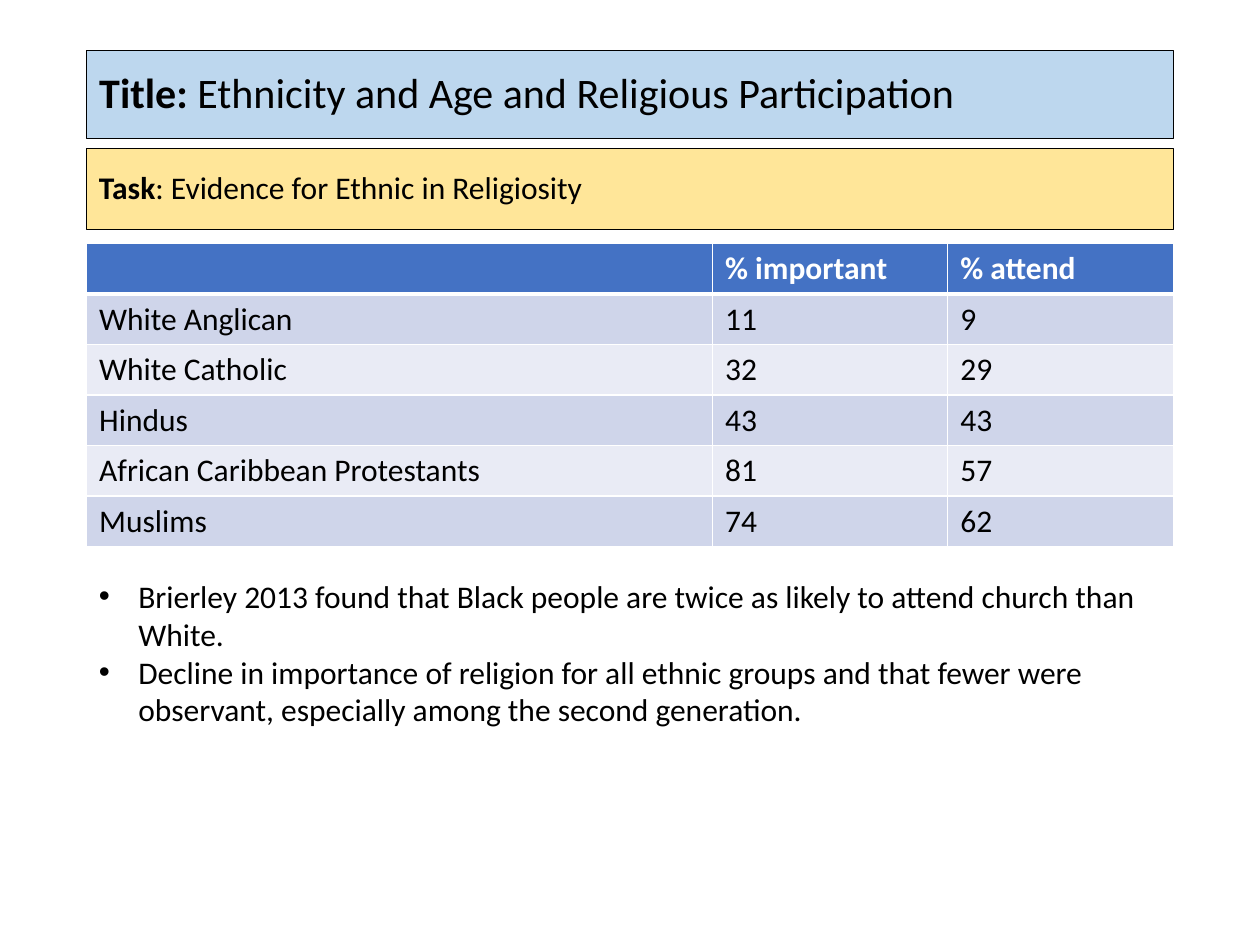
from lxml import etree
from pptx import Presentation
from pptx.dml.color import RGBColor
from pptx.enum import shapes, text
from pptx.oxml.ns import qn
from pptx.util import Pt

BLACK = RGBColor(0, 0, 0)
WHITE = RGBColor(255, 255, 255)
TITLE_BLUE = RGBColor(0xBD, 0xD7, 0xEE)
TASK_YELLOW = RGBColor(0xFF, 0xE6, 0x99)
HEADER_BLUE = RGBColor(0x44, 0x72, 0xC4)
BANDS = [RGBColor(0xE9, 0xEB, 0xF5), RGBColor(0xCF, 0xD5, 0xEA)]

LEFT, WIDTH = Pt(49.5), Pt(621)


def add_span(para, words, size=18, bold=False, color=BLACK):
    span = para.add_run()
    span.text = words
    span.font.name = "Calibri"
    span.font.size = Pt(size)
    span.font.bold = bold
    span.font.color.rgb = color


def add_border(cell, side, width):
    """Draw a white line on one side of a cell: L, R, T or B."""
    line = etree.SubElement(cell._tc.get_or_add_tcPr(), qn(f"a:ln{side}"), w=str(Pt(width)))
    fill = etree.SubElement(line, qn("a:solidFill"))
    etree.SubElement(fill, qn("a:srgbClr"), val=str(WHITE))


deck = Presentation()
deck.slide_width, deck.slide_height = Pt(720), Pt(540)
page = deck.slides.add_slide(deck.slide_layouts[5])

# Title and task banners
title = page.shapes.title
task = page.shapes.add_shape(shapes.MSO_SHAPE.RECTANGLE, LEFT, Pt(85), WIDTH, Pt(46))
task.shadow.inherit = False
title.left, title.top, title.width, title.height = LEFT, Pt(28.8), WIDTH, Pt(50.4)

banners = [
    (title, TITLE_BLUE, 24, "Title: ", "Ethnicity and Age and Religious Participation"),
    (task, TASK_YELLOW, 18, "Task", ": Evidence for Ethnic in Religiosity"),
]
for box, color, size, label, words in banners:
    box.fill.solid()
    box.fill.fore_color.rgb = color
    box.line.color.rgb = BLACK
    box.line.width = Pt(0.75)
    frame = box.text_frame
    frame.word_wrap = True
    frame.auto_size = text.MSO_AUTO_SIZE.NONE
    frame.vertical_anchor = text.MSO_ANCHOR.MIDDLE
    para = frame.paragraphs[0]
    para.alignment = text.PP_ALIGN.LEFT
    para.line_spacing = 0.9
    add_span(para, label, size, bold=True)
    add_span(para, words, size)

# Findings
findings = [
    "Brierley 2013 found that Black people are twice as likely to attend church than White.",
    "Decline in importance of religion for all ethnic groups and that fewer were observant, "
    "especially among the second generation.",
]
box = page.shapes.add_textbox(LEFT, Pt(326.2), WIDTH, Pt(116.6))
frame = box.text_frame
frame.word_wrap = True
for index, finding in enumerate(findings):
    para = frame.add_paragraph() if index else frame.paragraphs[0]
    props = para._p.get_or_add_pPr()
    props.set("marL", str(Pt(22.5)))
    props.set("indent", str(-Pt(22.5)))
    etree.SubElement(props, qn("a:buFont"), typeface="Arial")
    etree.SubElement(props, qn("a:buChar"), char="•")
    add_span(para, finding)

# Religiosity by group
rows = [
    ("", "% important", "% attend"),
    ("White Anglican", "11", "9"),
    ("White Catholic", "32", "29"),
    ("Hindus", "43", "43"),
    ("African Caribbean Protestants", "81", "57"),
    ("Muslims", "74", "62"),
]
table = page.shapes.add_table(len(rows), 3, LEFT, Pt(139.2), WIDTH, Pt(28.8 * len(rows))).table
for column, width in zip(table.columns, (357.7, 134.4, 128.9)):
    column.width = Pt(width)
for row_index, row in enumerate(rows):
    header = row_index == 0
    for column_index, words in enumerate(row):
        cell = table.cell(row_index, column_index)
        add_border(cell, "L", 1)
        add_border(cell, "R", 1)
        add_border(cell, "T", 3 if row_index == 1 else 1)
        add_border(cell, "B", 3 if header else 1)
        cell.fill.solid()
        cell.fill.fore_color.rgb = HEADER_BLUE if header else BANDS[row_index % 2]
        if words:
            add_span(cell.text_frame.paragraphs[0], words, bold=header,
                     color=WHITE if header else BLACK)

deck.save("out.pptx")
